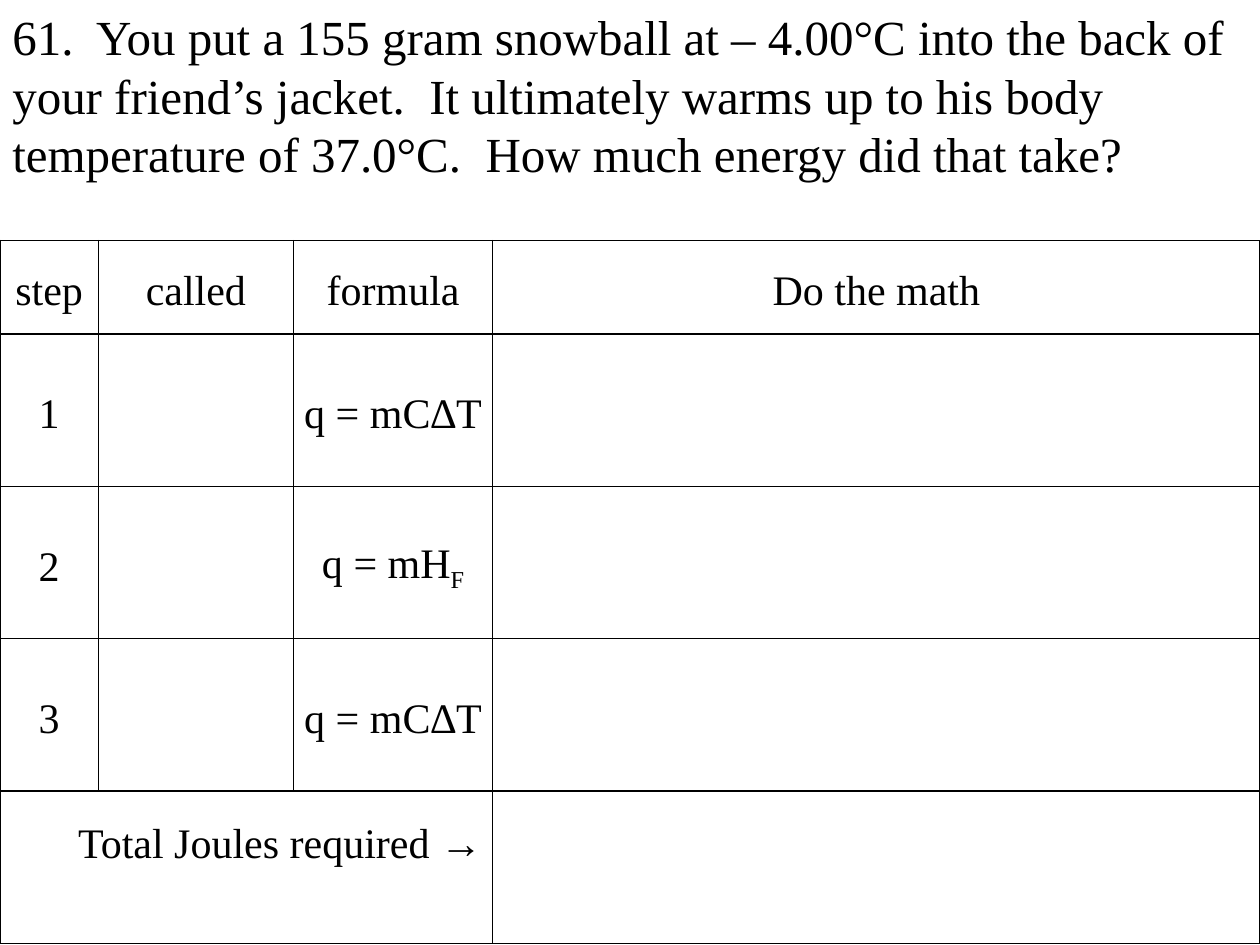
from lxml import etree
from pptx import Presentation
from pptx.dml.color import RGBColor
from pptx.enum.text import MSO_ANCHOR, PP_ALIGN
from pptx.oxml import parse_xml
from pptx.util import Inches, Pt

MIDDLE = MSO_ANCHOR.MIDDLE
CENTER, LEFT = PP_ALIGN.CENTER, PP_ALIGN.LEFT
DRAWING_NS = "http://schemas.openxmlformats.org/drawingml/2006/main"
BLACK = "000000"


def format_run(run, size, color=BLACK):
    run.font.name = "Times New Roman"
    run.font.size = Pt(size)
    run.font.color.rgb = RGBColor.from_string(color)


def add_borders(cell, color=BLACK):
    """Draw a 1 pt line on all four sides; the lines must precede the fill."""
    properties = cell._tc.get_or_add_tcPr()
    for position, side in enumerate(("lnL", "lnR", "lnT", "lnB")):
        line = parse_xml(f'<a:{side} xmlns:a="{DRAWING_NS}" w="{Pt(1)}"/>')
        fill = etree.SubElement(line, f"{{{DRAWING_NS}}}solidFill")
        etree.SubElement(fill, f"{{{DRAWING_NS}}}srgbClr", val=color)
        properties.insert(position, line)


presentation = Presentation()
presentation.slide_width = Inches(10)
presentation.slide_height = Inches(7.5)
slide = presentation.slides.add_slide(presentation.slide_layouts[6])

question = slide.shapes.add_textbox(0, 0, Inches(10), Inches(1.51)).text_frame
question.word_wrap = True
question.text = (
    "61.  You put a 155 gram snowball at – 4.00°C into the back of your "
    "friend’s jacket.  It ultimately warms up to his body temperature of "
    "37.0°C.  How much energy did that take?"
)
format_run(question.paragraphs[0].runs[0], 28)

# Each cell is a list of runs; a second run is a subscript.
worksheet = [
    [["step"], ["called"], ["formula"], ["Do the math"]],
    [["1"], [], ["q = mC∆T"], []],
    [["2"], [], ["q = mH", "F"], []],
    [["3"], [], ["q = mC∆T"], []],
    [["Total Joules required →"], [], [], []],
]
column_widths = [0.78, 1.55, 1.58, 6.09]
row_heights = [0.74] + [1.21] * 4

table = slide.shapes.add_table(
    len(row_heights), len(column_widths), 0, Inches(1.91),
    Inches(sum(column_widths)), Inches(sum(row_heights)),
).table
table.first_row = False
table.horz_banding = False
for column, width in zip(table.columns, column_widths):
    column.width = Inches(width)
for row, height in zip(table.rows, row_heights):
    row.height = Inches(height)

for row, row_content in zip(table.rows, worksheet):
    for cell, pieces in zip(row.cells, row_content):
        cell.fill.background()
        add_borders(cell)
        cell.vertical_anchor = MIDDLE
        cell.margin_left = cell.margin_right = Inches(0.04)
        cell.margin_top = cell.margin_bottom = Inches(0.04)
        paragraph = cell.text_frame.paragraphs[0]
        paragraph.alignment = CENTER
        paragraph.line_spacing = 1.19
        paragraph.space_after = Pt(6)
        for index, piece in enumerate(pieces):
            run = paragraph.add_run()
            run.text = piece
            format_run(run, 24)
            if index == 1:
                run.font._element.set("baseline", "-25000")

total_label = table.cell(4, 0)
total_label.merge(table.cell(4, 2))
total_label.text_frame.paragraphs[0].alignment = LEFT
total_label.margin_left = Inches(0.62)
total_label.margin_bottom = Inches(0.48)

presentation.save("out.pptx")
